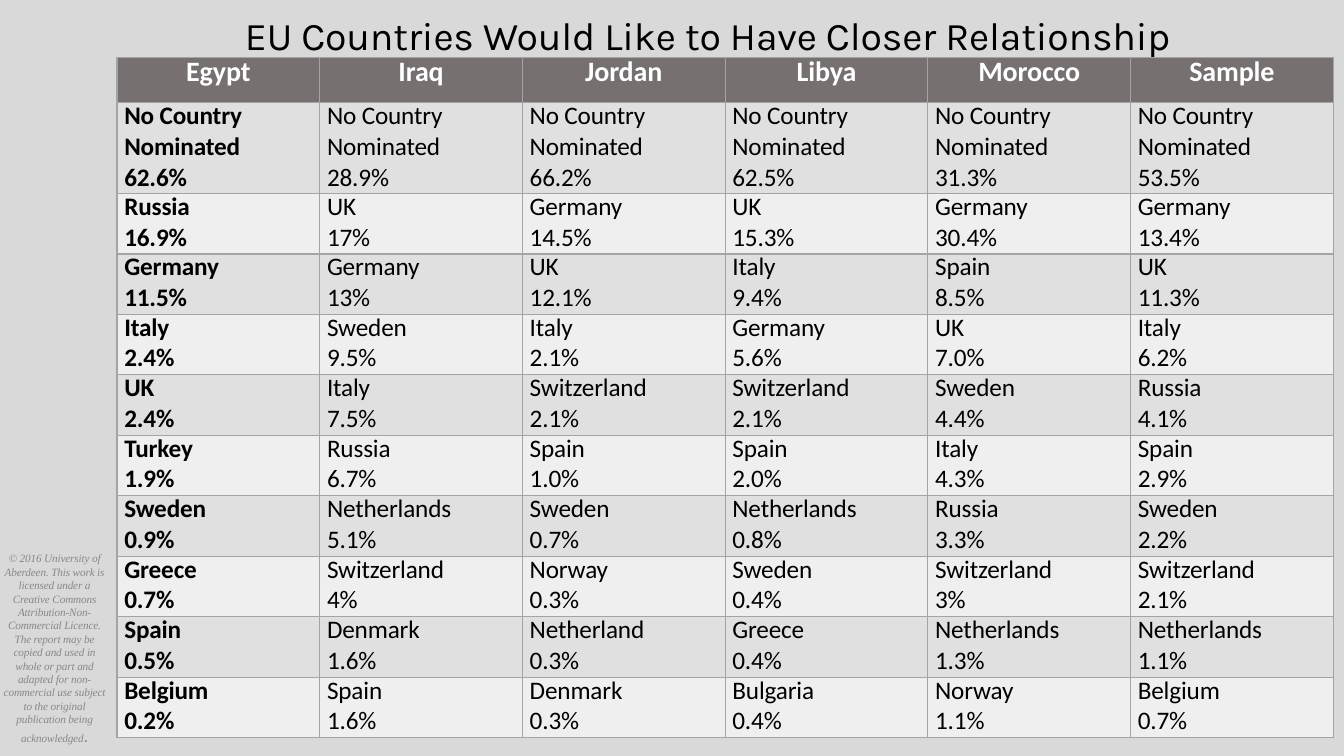
from lxml.etree import SubElement
from pptx import Presentation
from pptx.dml.color import RGBColor
from pptx.enum.text import PP_ALIGN
from pptx.oxml.ns import qn
from pptx.util import Pt

RANKINGS = {
    "Egypt": [("No Country\nNominated", "62.6%"), ("Russia", "16.9%"), ("Germany", "11.5%"),
              ("Italy", "2.4%"), ("UK", "2.4%"), ("Turkey", "1.9%"), ("Sweden", "0.9%"),
              ("Greece", "0.7%"), ("Spain", "0.5%"), ("Belgium", "0.2%")],
    "Iraq": [("No Country\nNominated", "28.9%"), ("UK", "17%"), ("Germany", "13%"),
             ("Sweden", "9.5%"), ("Italy", "7.5%"), ("Russia", "6.7%"), ("Netherlands", "5.1%"),
             ("Switzerland", "4%"), ("Denmark", "1.6%"), ("Spain", "1.6%")],
    "Jordan": [("No Country\nNominated", "66.2%"), ("Germany", "14.5%"), ("UK", "12.1%"),
               ("Italy", "2.1%"), ("Switzerland", "2.1%"), ("Spain", "1.0%"), ("Sweden", "0.7%"),
               ("Norway", "0.3%"), ("Netherland", "0.3%"), ("Denmark", "0.3%")],
    "Libya": [("No Country\nNominated", "62.5%"), ("UK", "15.3%"), ("Italy", "9.4%"),
              ("Germany", "5.6%"), ("Switzerland", "2.1%"), ("Spain", "2.0%"),
              ("Netherlands", "0.8%"), ("Sweden", "0.4%"), ("Greece", "0.4%"),
              ("Bulgaria", "0.4%")],
    "Morocco": [("No Country\nNominated", "31.3%"), ("Germany", "30.4%"), ("Spain", "8.5%"),
                ("UK", "7.0%"), ("Sweden", "4.4%"), ("Italy", "4.3%"), ("Russia", "3.3%"),
                ("Switzerland", "3%"), ("Netherlands", "1.3%"), ("Norway", "1.1%")],
    "Sample": [("No Country\nNominated", "53.5%"), ("Germany", "13.4%"), ("UK", "11.3%"),
               ("Italy", "6.2%"), ("Russia", "4.1%"), ("Spain", "2.9%"), ("Sweden", "2.2%"),
               ("Switzerland", "2.1%"), ("Netherlands", "1.1%"), ("Belgium", "0.7%")],
}
LICENCE = (
    "© 2016 University of Aberdeen. This work is licensed under a Creative Commons "
    "Attribution-Non-Commercial Licence.\n"
    "The report may be copied and used in whole or part and adapted for non-commercial use "
    "subject to the original publication being acknowledged"
)


def color(hex_code):
    return RGBColor.from_string(hex_code)


class RankingSlide:
    BACKDROP, GRID = "D9D9D9", "A4A4A4"
    HEADER_FILL, BANDS = "767070", ("E0E0E0", "EFEFEF")
    TITLE_FONT, TABLE_FONT, LICENCE_FONT = "Karla", "Calibri", "Times New Roman"

    def __init__(self, presentation):
        self.slide = presentation.slides.add_slide(presentation.slide_layouts[6])
        self.slide.background.fill.solid()
        self.slide.background.fill.fore_color.rgb = color(self.BACKDROP)

    def style_run(self, run, font, size, hex_code, bold=False, italic=False):
        run.font.name, run.font.size = font, Pt(size)
        run.font.bold, run.font.italic = bold, italic
        run.font.color.rgb = color(hex_code)
        run._r.get_or_add_rPr().set("spc", "-10")

    def text(self, left, top, width, height, words, align, *style, **emphasis):
        frame = self.slide.shapes.add_textbox(Pt(left), Pt(top), Pt(width), Pt(height)).text_frame
        frame.margin_left = frame.margin_right = frame.margin_top = frame.margin_bottom = 0
        frame.word_wrap = True
        frame.text = words
        for paragraph in frame.paragraphs:
            paragraph.alignment = align
            for run in paragraph.runs:
                self.style_run(run, *style, **emphasis)
        return frame

    def border(self, cell):
        for side in ("lnL", "lnR", "lnT", "lnB"):
            line = SubElement(cell._tc.get_or_add_tcPr(), qn(f"a:{side}"), w=str(Pt(1)))
            fill = SubElement(line, qn("a:solidFill"))
            SubElement(fill, qn("a:srgbClr"), val=self.GRID)

    def cell(self, cell, words, fill, size, hex_code, bold, align, leading):
        self.border(cell)
        cell.fill.solid()
        cell.fill.fore_color.rgb = color(fill)
        cell.margin_left = cell.margin_right = cell.margin_top = cell.margin_bottom = 0
        cell.text_frame.text = words
        for paragraph in cell.text_frame.paragraphs:
            paragraph.alignment = align
            for run in paragraph.runs:
                self.style_run(run, self.TABLE_FONT, size, hex_code, bold)
        cell.text_frame.paragraphs[0].line_spacing = Pt(leading)

    def table(self, left, top, column_width, row_heights, rankings):
        table = self.slide.shapes.add_table(
            len(row_heights), len(rankings), Pt(left), Pt(top),
            Pt(column_width * len(rankings)), Pt(sum(row_heights))).table
        table.horz_banding = False
        for row, height in zip(table.rows, row_heights):
            row.height = Pt(height)
        for column, (surveyed, ranking) in enumerate(rankings.items()):
            table.columns[column].width = Pt(column_width)
            self.cell(table.cell(0, column), surveyed, self.HEADER_FILL, 20, "FFFFFF", True,
                      PP_ALIGN.CENTER, 22.8)
            for rank, (partner, share) in enumerate(ranking):
                answer = table.cell(rank + 1, column)
                separator = " " if "\n" in partner else "\n"
                self.cell(answer, partner + separator + share, self.BANDS[rank % 2], 18,
                          "000000", column == 0, PP_ALIGN.LEFT, 20.4)
                answer.margin_left = Pt(5.2)
                if separator == " ":
                    answer.margin_right = Pt(30)


def main():
    presentation = Presentation()
    presentation.slide_width, presentation.slide_height = Pt(960), Pt(540)
    page = RankingSlide(presentation)
    page.text(175, 8, 726, 35, "EU Countries Would Like to Have Closer Relationship",
              PP_ALIGN.LEFT, page.TITLE_FONT, 28, "000000")
    licence = page.text(0, 394, 78, 140, LICENCE, PP_ALIGN.CENTER,
                        page.LICENCE_FONT, 8, "888888", italic=True)
    full_stop = licence.paragraphs[-1].add_run()
    full_stop.text = "."
    page.style_run(full_stop, page.TABLE_FONT, 12, "888888")
    page.table(83.6, 41, 144.8, [32.4, 64.8] + [43.2] * 9, RANKINGS)
    presentation.save("out.pptx")


if __name__ == "__main__":
    main()
